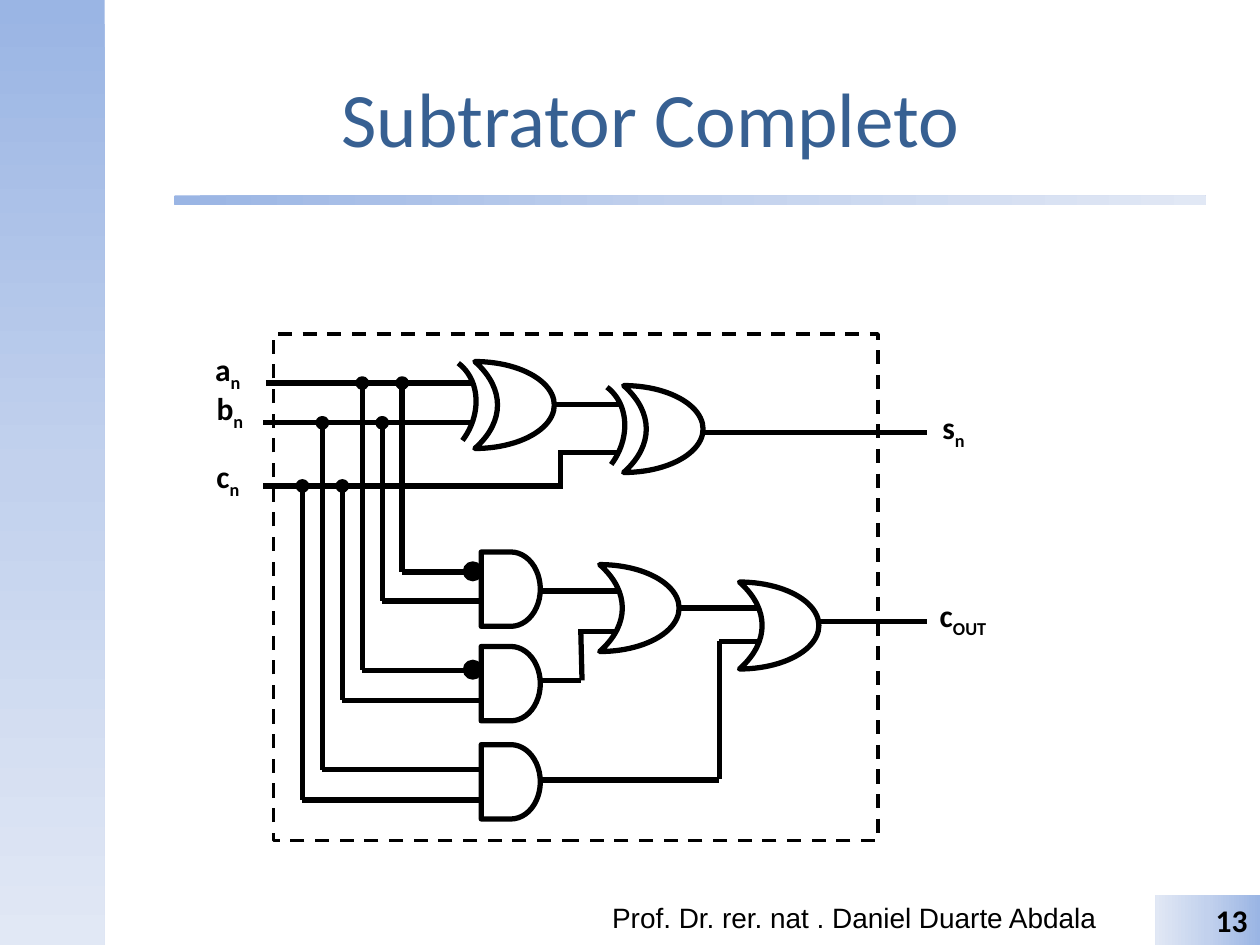
"""Build a slide showing the logic circuit of a full subtractor."""
from copy import deepcopy
from dataclasses import dataclass

from lxml.etree import SubElement
from pptx import Presentation
from pptx.dml.color import RGBColor
from pptx.enum.dml import MSO_LINE
from pptx.enum.shapes import MSO_CONNECTOR, MSO_SHAPE as Kind
from pptx.enum.text import MSO_ANCHOR as Anchor, PP_ALIGN as Align
from pptx.oxml.ns import qn
from pptx.util import Pt


@dataclass(frozen=True)
class Theme:
    ink: RGBColor = RGBColor.from_string("000000")
    heading: RGBColor = RGBColor.from_string("376092")
    fade: tuple = ("9AB5E4", "C2D1ED", "E1E8F5")
    body_font: str = "Calibri"
    footer_font: str = "Arial"
    title_size: int = 44
    label_size: int = 18
    footer_size: int = 16
    wire: int = 3
    thin: int = 2


theme = Theme()
deck = Presentation()
deck.slide_width, deck.slide_height = Pt(720), Pt(540)
page = deck.slides.add_slide(deck.slide_layouts[6])


def draw(kind, left, top, width, height, weight=theme.wire):
    shape = page.shapes.add_shape(kind, Pt(left), Pt(top), Pt(width), Pt(height))
    shape.shadow.inherit = False
    shape.fill.background()
    if weight:
        shape.line.color.rgb = theme.ink
        shape.line.width = Pt(weight)
    else:
        shape.line.fill.background()
    return shape


def write(box, parts, size, align=Align.LEFT, bold=False, color=theme.ink, font=theme.body_font):
    para = box.text_frame.paragraphs[0]
    para.alignment = align
    for index, part in enumerate(parts):
        span = para.add_run()
        span.text = part
        span.font.size, span.font.bold, span.font.name = Pt(size), bold, font
        span.font.color.rgb = color
        if index:
            span.font._element.set("baseline", "-25000")


bands = [
    (Kind.RECTANGLE, 0, 0, 59.8, 540, 270),
    (Kind.ROUNDED_RECTANGLE, 99.4, 111.6, 589.7, 5.8, 0),
    (Kind.RECTANGLE, 660.2, 511.2, 59.8, 28.8, 180),
]
for kind, left, top, width, height, angle in bands:
    band = draw(kind, left, top, width, height, 0)
    band.fill.gradient()
    band.fill.gradient_angle = angle
    stops = band._element.xpath(".//a:gsLst")[0]
    stops.insert(1, deepcopy(stops[0]))
    for index, stop in enumerate(band.fill.gradient_stops):
        stop.position = index / 2
        stop.color.rgb = RGBColor.from_string(theme.fade[index])
write(band, ["13"], theme.label_size, Align.RIGHT, True)

title = page.shapes.add_textbox(Pt(59.8), Pt(21.6), Pt(624.2), Pt(90))
title.text_frame.word_wrap = True
title.text_frame.vertical_anchor = Anchor.MIDDLE
write(title, ["Subtrator Completo"], theme.title_size, Align.CENTER, color=theme.heading)

footer = page.shapes.add_textbox(Pt(342.7), Pt(511.2), Pt(301.7), Pt(28.8))
footer.text_frame.word_wrap = True
write(footer, ["Prof. Dr. rer. nat . Daniel Duarte Abdala"], theme.footer_size, font=theme.footer_font)

frame = draw(Kind.RECTANGLE, 156.2, 190.8, 345.6, 289.4, theme.thin)
frame.line.dash_style = MSO_LINE.DASH

labels = [
    ("a", "n", 115.9, 196.6, 33.1, Align.LEFT),
    ("b", "n", 115.9, 218.9, 31, Align.CENTER),
    ("c", "n", 115.9, 257.8, 28.8, Align.CENTER),
    ("s", "n", 531.4, 229.7, 32.4, Align.LEFT),
    ("c", "OUT", 529.9, 337, 44.6, Align.LEFT),
]
for name, subscript, left, top, width, align in labels:
    label = page.shapes.add_textbox(Pt(left), Pt(top), Pt(width), Pt(28.8))
    label.text_frame.word_wrap = False
    write(label, [name, subscript], theme.label_size, align, True)

for top in (315.4, 369.4, 425.5):
    draw(Kind.FLOWCHART_DELAY, 275, top, 33.8, 42.5)

curved_gates = [
    (271.4, 206.6, True), (356.4, 220.3, True),
    (342.7, 322.6, False), (422.6, 332.6, False),
]
for left, top, exclusive in curved_gates:
    gate = draw(Kind.MOON, left, top, 45.4, 49.7)
    gate.adjustments[0] = 0.715
    gate._element.spPr.find(qn("a:xfrm")).set("flipH", "1")
    if exclusive:
        arc = draw(Kind.ARC, left - 58.3, top - 5.8, 56.9, 67.7)
        arc.rotation = 36.9

input_rows = {"a": 218.9, "b": 241.6, "c": 277.7}
taps = [("c", 457.2), ("b", 439.9), ("c", 400.3), ("a", 383), ("b", 343.4), ("a", 326.9)]
wires = [
    (151.9, input_rows["a"], 269.3, input_rows["a"]),
    (150.5, input_rows["b"], 268.6, input_rows["b"]),
    (150.5, input_rows["c"], 320.4, input_rows["c"]),
    (320.4, 279.4, 320.4, 257),
    (320.4, 258.5, 354.2, 258.5),
    (316.8, 231.1, 354.2, 231.1),
    (401.8, 247.3, 529.9, 247.3),
    (308.9, 337.7, 354.2, 337.7),
    (308.9, 388.8, 331.9, 388.8),
    (332.6, 388.8, 331.9, 360.7),
    (330.5, 360.7, 352.8, 360.7),
    (388.8, 347.4, 434.2, 347.4),
    (308.9, 445.7, 411.1, 445.7),
    (411.1, 445, 411.1, 366.5),
    (411.1, 366.5, 433.4, 366.5),
    (468, 355, 529.9, 355),
]
dots = [(270.2, 326.5, 9.4), (270.2, 382.7, 9.4)]
for index, (signal, gate_row) in enumerate(taps):
    column = 172.8 + 11.4 * index
    wires.append((column, input_rows[signal], column, gate_row))
    wires.append((column, gate_row, 275, gate_row))
    dots.append((column, input_rows[signal], 5.8))

for start_x, start_y, end_x, end_y in wires:
    wire = page.shapes.add_connector(
        MSO_CONNECTOR.STRAIGHT, Pt(start_x), Pt(start_y), Pt(end_x), Pt(end_y))
    wire.line.color.rgb = theme.ink
    wire.line.width = Pt(theme.wire)
    SubElement(wire._element.spPr, qn("a:effectLst"))

for center_x, center_y, size in dots:
    dot = draw(Kind.OVAL, center_x - size / 2, center_y - size / 2, size, size, theme.thin)
    dot.fill.solid()
    dot.fill.fore_color.rgb = theme.ink

deck.save("out.pptx")
